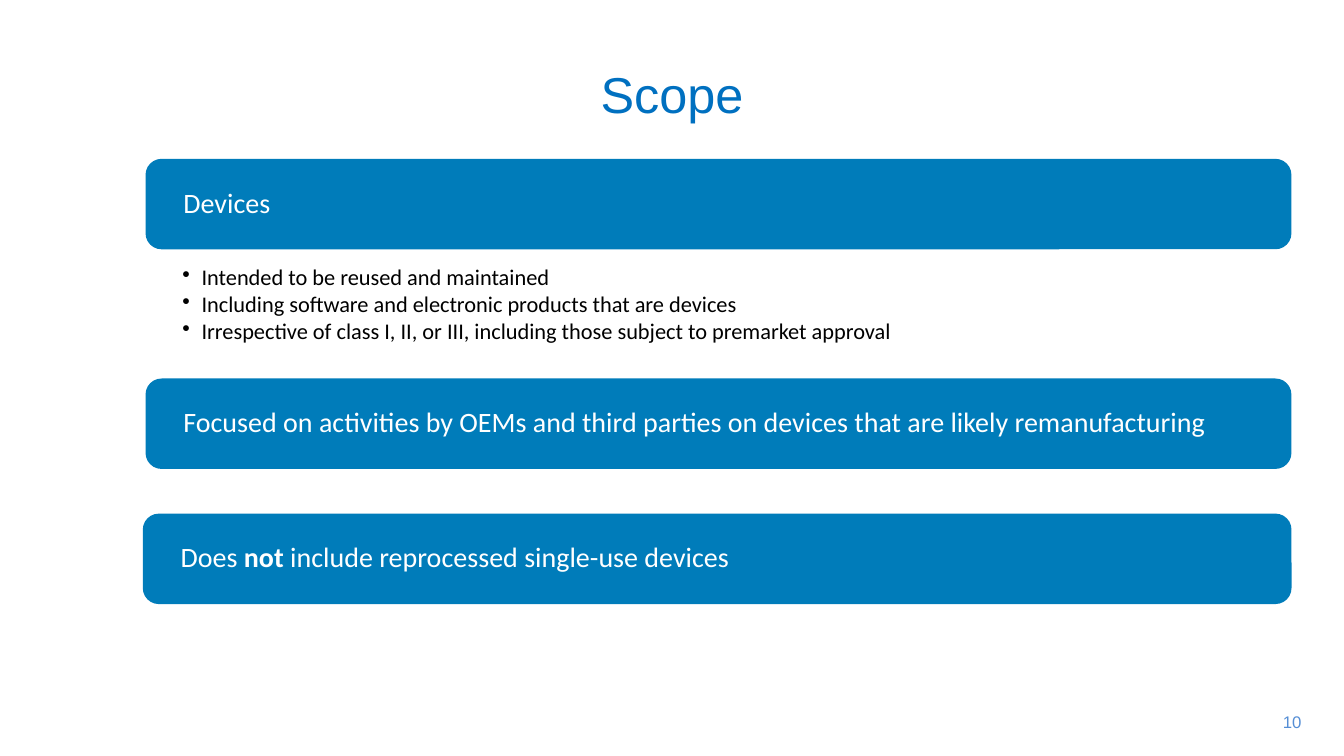
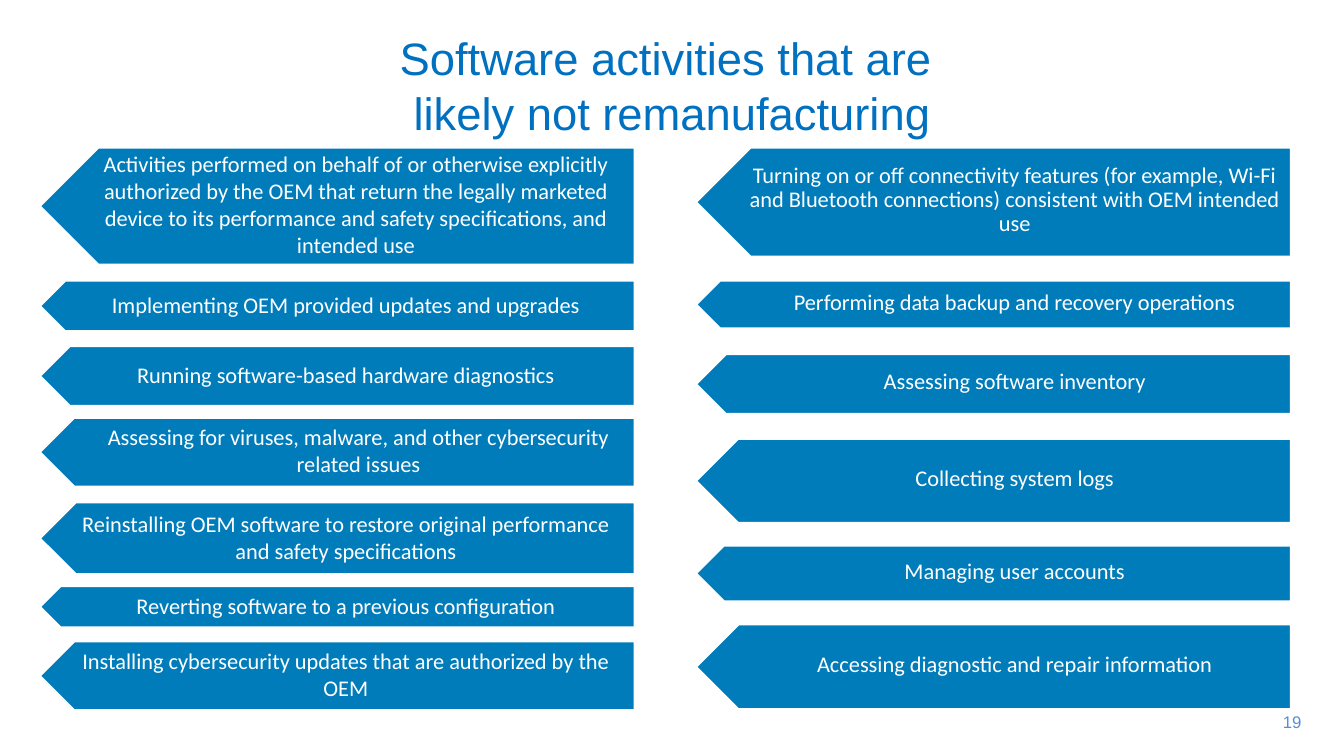
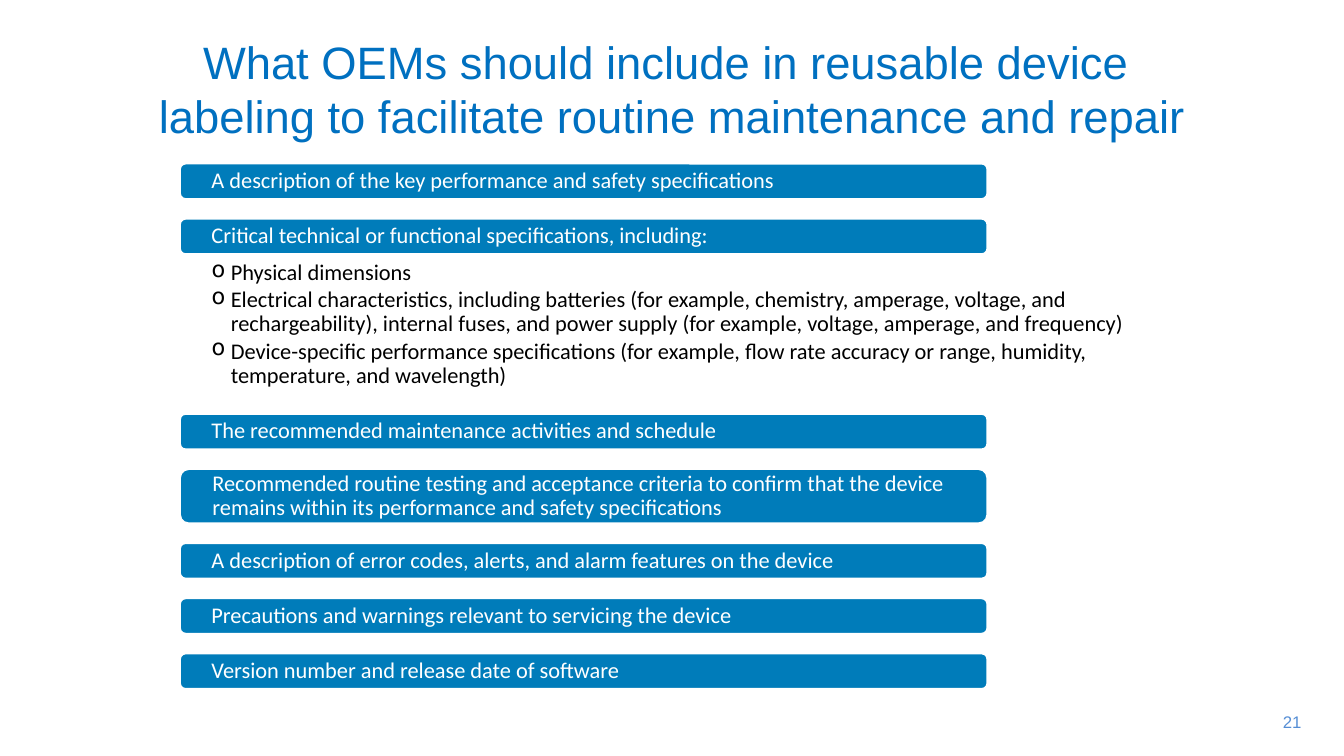
from lxml import etree
from pptx import Presentation
from pptx.dml.color import RGBColor
from pptx.enum.shapes import MSO_SHAPE
from pptx.enum.text import MSO_ANCHOR, MSO_AUTO_SIZE, PP_ALIGN
from pptx.oxml.ns import qn
from pptx.util import Pt

COLORS = {"title": "0070C0", "fill": "007CBA", "number": "558ED5",
          "white": "FFFFFF", "black": "000000"}


def write_text(shape, paragraphs, size, color, font="Calibri", margins=(0, 0, 0, 0),
               align=PP_ALIGN.LEFT, anchor=MSO_ANCHOR.MIDDLE, spacing=1.0,
               after=0, indent=0, bullet=None):
    """Fill a shape; each paragraph is a list of (text, bold) runs, None breaks a line."""
    frame = shape.text_frame
    frame.word_wrap = True
    frame.auto_size = MSO_AUTO_SIZE.NONE
    frame.vertical_anchor = anchor
    (frame.margin_left, frame.margin_top,
     frame.margin_right, frame.margin_bottom) = [Pt(margin) for margin in margins]
    for index, runs in enumerate(paragraphs):
        paragraph = frame.add_paragraph() if index else frame.paragraphs[0]
        properties = paragraph._p.get_or_add_pPr()
        properties.set("marL", str(Pt(indent)))
        properties.set("indent", str(-Pt(indent) if bullet else 0))
        if bullet:
            etree.SubElement(properties, qn("a:buChar")).set("char", bullet)
        paragraph.alignment = align
        paragraph.line_spacing = spacing
        paragraph.space_after = Pt(after)
        for part in runs:
            if part is None:
                paragraph.add_line_break()
                continue
            run = paragraph.add_run()
            run.text, run.font.bold = part
            run.font.name = font
            run.font.size = Pt(size)
            run.font.color.rgb = RGBColor.from_string(COLORS[color])


def add_filled_shape(shapes, kind, left, top, width, height, line):
    shape = shapes.add_shape(kind, Pt(left), Pt(top), Pt(width), Pt(height))
    shape.shadow.inherit = False
    shape.fill.solid()
    shape.fill.fore_color.rgb = RGBColor.from_string(COLORS["fill"])
    shape.line.color.rgb = RGBColor.from_string(COLORS[line])
    shape.line.width = Pt(2)
    return shape


presentation = Presentation()
presentation.slide_width = Pt(960)
presentation.slide_height = Pt(540)

# Titles and slide numbers
slides = []
for number, title_top, title_size, title_lines in [
    ("10", 21.6, 36, [("Scope", False)]),
    ("19", 15.8, 32.4, [("Software activities that are ", False), None,
                        ("likely not remanufacturing", False)]),
    ("21", 18, 32.4, [("What OEMs should include in reusable device ", False), None,
                      ("labeling to facilitate routine maintenance and repair", False)]),
]:
    slide = presentation.slides.add_slide(presentation.slide_layouts[5])
    title = slide.shapes.title
    title.left, title.top, title.width, title.height = Pt(48), Pt(title_top), Pt(864), Pt(90)
    write_text(title, [title_lines], title_size, "title", "Arial",
               (7.2, 3.6, 7.2, 3.6), PP_ALIGN.CENTER)
    number_box = slide.shapes.add_textbox(Pt(900), Pt(504.7), Pt(36.7), Pt(21.6))
    write_text(number_box, [[(number, False)]], 12, "number", "Arial",
               (0, 3.6, 7.2, 3.6), PP_ALIGN.RIGHT, MSO_ANCHOR.TOP)
    slides.append(slide)
scope_slide, software_slide, labeling_slide = slides

# Scope bars
for left, top, runs in [
    (105, 114.5, [("Devices", False)]),
    (105, 271.4, [("Focused on activities by OEMs and third parties on devices "
                   "that are likely remanufacturing", False)]),
    (103, 367.9, [("Does ", False), ("not", True),
                  (" include reprocessed single-use devices", False)]),
]:
    bar = add_filled_shape(scope_slide.shapes, MSO_SHAPE.ROUNDED_RECTANGLE,
                           left, top, 921.5 - left, 62.6, "fill")
    write_text(bar, [runs], 20, "white", margins=(23, 0, 23, 0), spacing=0.9)

# Software activities: top, height, text indent, wording
left_activities = [
    (105.1, 84.2, 14.4, "Activities performed on behalf of or otherwise explicitly authorized "
     "by the OEM that return the legally marketed device to its performance and safety "
     "specifications, and intended use"),
    (200.2, 36.7, 0, "Implementing OEM provided updates and upgrades"),
    (247, 43.2, 0, "Running software-based hardware diagnostics"),
    (298.1, 49.7, 18, "Assessing for viruses, malware, and other cybersecurity related issues"),
    (358.6, 51.8, 0, "Reinstalling OEM software to restore original performance and safety "
     "specifications"),
    (418.3, 30.2, 0, "Reverting software to a previous configuration"),
    (457.9, 49.7, 0, "Installing cybersecurity updates that are authorized by the OEM"),
]
right_activities = [
    (105.1, 78.5, 18, "Turning on or off connectivity features (for example, Wi-Fi and "
     "Bluetooth connections) consistent with OEM intended use"),
    (200.2, 34.6, 18, "Performing data backup and recovery operations"),
    (252.7, 43.2, 18, "Assessing software inventory"),
    (313.2, 60.5, 18, "Collecting system logs"),
    (389.5, 40.3, 18, "Managing user accounts"),
    (445.7, 61.2, 18, "Accessing diagnostic and repair information"),
]
for left, spacing, activities in [(28.1, 1.0, left_activities), (496.8, 0.9, right_activities)]:
    for top, height, indent, text in activities:
        group = software_slide.shapes.add_group_shape()
        arrow = add_filled_shape(group.shapes, MSO_SHAPE.PENTAGON,
                                 left, top, 425.5, height, "white")
        arrow.rotation = 180
        label = group.shapes.add_textbox(Pt(left + 6.2), Pt(top - 1.2), Pt(419), Pt(height))
        write_text(label, [[(text, False)]], 16, "white", margins=(11.5, 2.9, 5, 2.9),
                   align=PP_ALIGN.CENTER, spacing=spacing, indent=indent)

# Labeling bars, stacked with equal gaps; the last value is room kept for a list below
bar_top = 116.5
for height, text, list_room in [
    (26, "A description of the key performance and safety specifications", 0),
    (26, "Critical technical or functional specifications, including:", 100),
    (26, "The recommended maintenance activities and schedule", 0),
    (39.5, "Recommended routine testing and acceptance criteria to confirm that the device "
     "remains within its performance and safety specifications", 0),
    (26, "A description of error codes, alerts, and alarm features on the device", 0),
    (26, "Precautions and warnings relevant to servicing the device", 0),
    (26, "Version number and release date of software", 0),
]:
    bar = add_filled_shape(labeling_slide.shapes, MSO_SHAPE.ROUNDED_RECTANGLE,
                           128.2, bar_top, 577.4, height, "white")
    write_text(bar, [[(text, False)]], 16, "white", margins=(21.6, 0, 21.6, 0), spacing=0.9)
    bar_top += height + 13.4 + list_room

# Bulleted details under the bars
for slide, left, top, width, height, bullet, items in [
    (scope_slide, 130.3, 190, 725, 62, "•", [
        "Intended to be reused and maintained",
        "Including software and electronic products that are devices",
        "Irrespective of class I, II, or III, including those subject to premarket approval"]),
    (labeling_slide, 151.2, 186.5, 697, 95, "o", [
        "Physical dimensions",
        "Electrical characteristics, including batteries (for example, chemistry, amperage, "
        "voltage, and rechargeability), internal fuses, and power supply (for example, "
        "voltage, amperage, and frequency)",
        "Device-specific performance specifications (for example, flow rate accuracy or "
        "range, humidity, temperature, and wavelength)"]),
]:
    details = slide.shapes.add_textbox(Pt(left), Pt(top), Pt(width), Pt(height))
    write_text(details, [[(item, False)] for item in items], 16, "black",
               anchor=MSO_ANCHOR.TOP, spacing=0.9, after=2.2, indent=13.7, bullet=bullet)

presentation.save("out.pptx")
